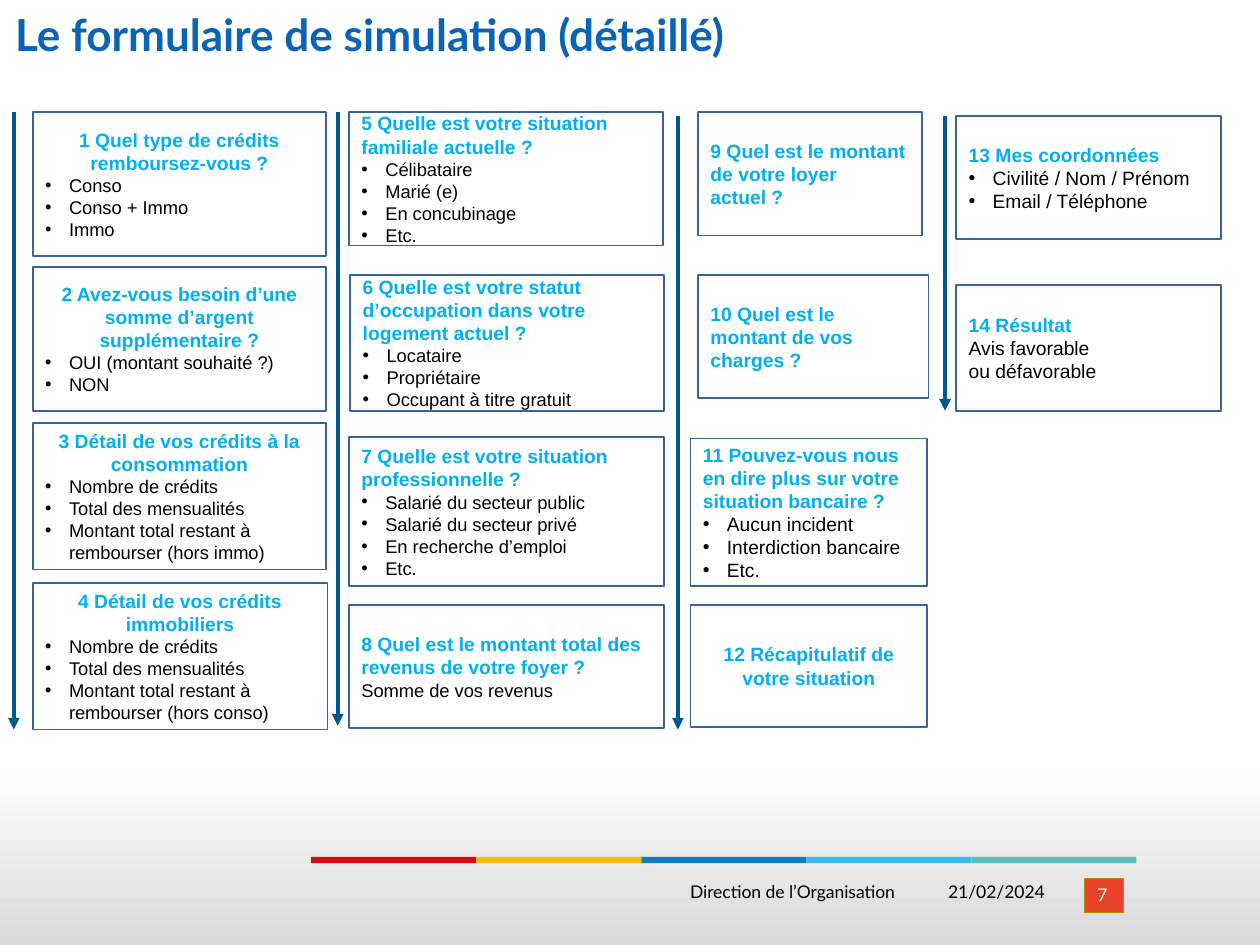
from lxml.etree import SubElement
from pptx import Presentation
from pptx.dml.color import RGBColor as RGB
from pptx.enum.shapes import MSO_CONNECTOR as LINK, MSO_SHAPE as SHAPE
from pptx.enum.text import MSO_ANCHOR as ANCHOR, MSO_AUTO_SIZE as FIT, PP_ALIGN as ALIGN
from pptx.oxml.ns import qn
from pptx.util import Emu, Pt

SCALE = 9144  # EMU per px, 100 px to the inch
HUES = {
    "title": "0A64B6", "head": "00B0F0", "text": "000000", "white": "FFFFFF",
    "edge": "39639D", "arrow": "00598A", "grey": "D9D9D9",
    "badge": "E8422A", "rim": "AF8D00",
    "red": "D90A10", "gold": "F7C003", "blue": "127ABF", "sky": "39BBED", "mint": "57C1B7",
}
STRIPES = ("red", "gold", "blue", "sky", "mint")

# Each column: head alignment, body size, arrow (x, top, end), boxes.
# Each box: place, head, body lines, bulleted or not.
COLUMNS = [
    (ALIGN.CENTER, 10.5, (11, 89, 579), [
        ((26, 89, 233, 114), "1 Quel type de crédits remboursez-vous ?",
         ["Conso", "Conso + Immo", "Immo"], True),
        ((26, 212, 233, 114), "2 Avez-vous besoin d’une somme d’argent supplémentaire ?",
         ["OUI (montant souhaité ?)", "NON"], True),
        ((26, 336, 233, 116), "3 Détail de vos crédits à la consommation",
         ["Nombre de crédits", "Total des mensualités",
          "Montant total restant à rembourser (hors immo)"], True),
        ((26, 463, 234, 116), "4 Détail de vos crédits immobiliers",
         ["Nombre de crédits", "Total des mensualités",
          "Montant total restant à rembourser (hors conso)"], True),
    ]),
    (ALIGN.LEFT, 10.5, (268, 89, 576), [
        ((277, 89, 249, 106), "5 Quelle est votre situation familiale actuelle ?",
         ["Célibataire", "Marié (e)", "En concubinage", "Etc."], True),
        ((278, 218, 249, 108),
         "6 Quelle est votre statut d’occupation dans votre logement actuel ?",
         ["Locataire", "Propriétaire", "Occupant à titre gratuit"], True),
        ((277, 347, 250, 118), "7 Quelle est votre situation professionnelle ?",
         ["Salarié du secteur public", "Salarié du secteur privé",
          "En recherche d’emploi", "Etc."], True),
        ((277, 480, 250, 98), "8 Quel est le montant total des revenus de votre foyer ?",
         ["Somme de vos revenus"], False),
    ]),
    (ALIGN.LEFT, 11, (538, 92, 579), [
        ((554, 89, 178, 98), "9 Quel est le montant de votre loyer actuel ?", [], False),
        ((554, 218, 183, 98), "10 Quel est le montant de vos charges ?", [], False),
        ((548, 348, 188, 117),
         "11 Pouvez-vous nous en dire plus sur votre situation bancaire ?",
         ["Aucun incident", "Interdiction bancaire", "Etc."], True),
    ]),
    (ALIGN.LEFT, 11, (750, 92, 326), [
        ((759, 92, 210, 98), "13 Mes coordonnées",
         ["Civilité / Nom / Prénom", "Email / Téléphone"], True),
        ((759, 226, 210, 100), "14 Résultat", ["Avis favorable", "ou défavorable"], False),
    ]),
]
RECAP = ((548, 480, 188, 97), "12 Récapitulatif de votre situation", [], False)


def px(*nums):
    return [Emu(n * SCALE) for n in nums]


def hue(name):
    return RGB.from_string(HUES[name])


def write(frame, text, size=10, color="text", font="Arial", bold=False,
          align=ALIGN.LEFT, bullet=False):
    """Fill the empty first paragraph, or add one after it."""
    para = frame.paragraphs[0]
    if para.runs:
        para = frame.add_paragraph()
    para.alignment = align
    if bullet:
        props = para._p.get_or_add_pPr()
        props.set("marL", str(19 * SCALE))
        props.set("indent", str(-19 * SCALE))
        SubElement(props, qn("a:buFont"), typeface="Arial")
        SubElement(props, qn("a:buChar"), char="•")
    run = para.add_run()
    run.text = text
    run.font.name, run.font.size, run.font.bold = font, Pt(size), bold
    run.font.color.rgb = hue(color)


class Deck:
    def __init__(self):
        self.prs = Presentation()
        self.prs.slide_width, self.prs.slide_height = px(1000, 750)
        self.slide = self.prs.slides.add_slide(self.prs.slide_layouts[5])
        self.shapes = self.slide.shapes

    def shade(self):
        """Fade the background from grey at the bottom to white."""
        fill = self.slide.background.fill
        fill.gradient()
        fill.gradient_angle = 90
        for stop, name, pos in zip(fill.gradient_stops, ("grey", "white"), (0, 0.19)):
            stop.color.rgb = hue(name)
            stop.position = pos

    def title(self, text, place):
        item = self.shapes.title
        item.left, item.top, item.width, item.height = px(*place)
        frame = item.text_frame
        frame.auto_size, frame.vertical_anchor = FIT.NONE, ANCHOR.MIDDLE
        write(frame, text, size=25.2, color="title", font="Lato", bold=True)

    def rect(self, place, fill, edge=None, width=1):
        item = self.shapes.add_shape(SHAPE.RECTANGLE, *px(*place))
        item.shadow.inherit = False
        item.fill.solid()
        item.fill.fore_color.rgb = hue(fill)
        if edge:
            item.line.color.rgb = hue(edge)
            item.line.width = Pt(width)
        else:
            item.line.fill.background()
        return item

    def label(self, text, place, **style):
        frame = self.shapes.add_textbox(*px(*place)).text_frame
        frame.word_wrap = True
        write(frame, text, font="Lato", **style)

    def card(self, place, head, lines, bullet, align, size):
        frame = self.rect(place, "white", "edge").text_frame
        frame.word_wrap, frame.vertical_anchor = True, ANCHOR.MIDDLE
        write(frame, head, size=11, color="head", bold=True, align=align)
        for line in lines:
            write(frame, line, size=size, bullet=bullet)

    def arrow(self, x, top, end):
        item = self.shapes.add_connector(LINK.STRAIGHT, *px(x, top, x, end))
        item.line.color.rgb = hue("arrow")
        item.line.width = Pt(2.25)
        SubElement(item.line._get_or_add_ln(), qn("a:tailEnd"), type="triangle")
        SubElement(item._element.spPr, qn("a:effectLst"))


def main():
    deck = Deck()
    deck.shade()
    deck.rect((861, 697, 31, 27), "badge", "rim", width=0)
    for i, name in enumerate(STRIPES):
        deck.rect((247 + 131 * i, 680, 131, 5), name)
    deck.title("Le formulaire de simulation (détaillé)", (2, 5, 900, 44))
    deck.label("21/02/2024", (728, 694, 111, 35), align=ALIGN.RIGHT)
    deck.label("Direction de l’Organisation", (358, 694, 362, 35), align=ALIGN.RIGHT)
    deck.label("7", (850, 697, 50, 27), color="white", align=ALIGN.CENTER)
    for align, size, _, cards in COLUMNS:
        for card in cards:
            deck.card(*card, align, size)
    deck.card(*RECAP, ALIGN.CENTER, 11)
    for _, _, arrow, _ in COLUMNS:
        deck.arrow(*arrow)
    deck.prs.save("out.pptx")


if __name__ == "__main__":
    main()
